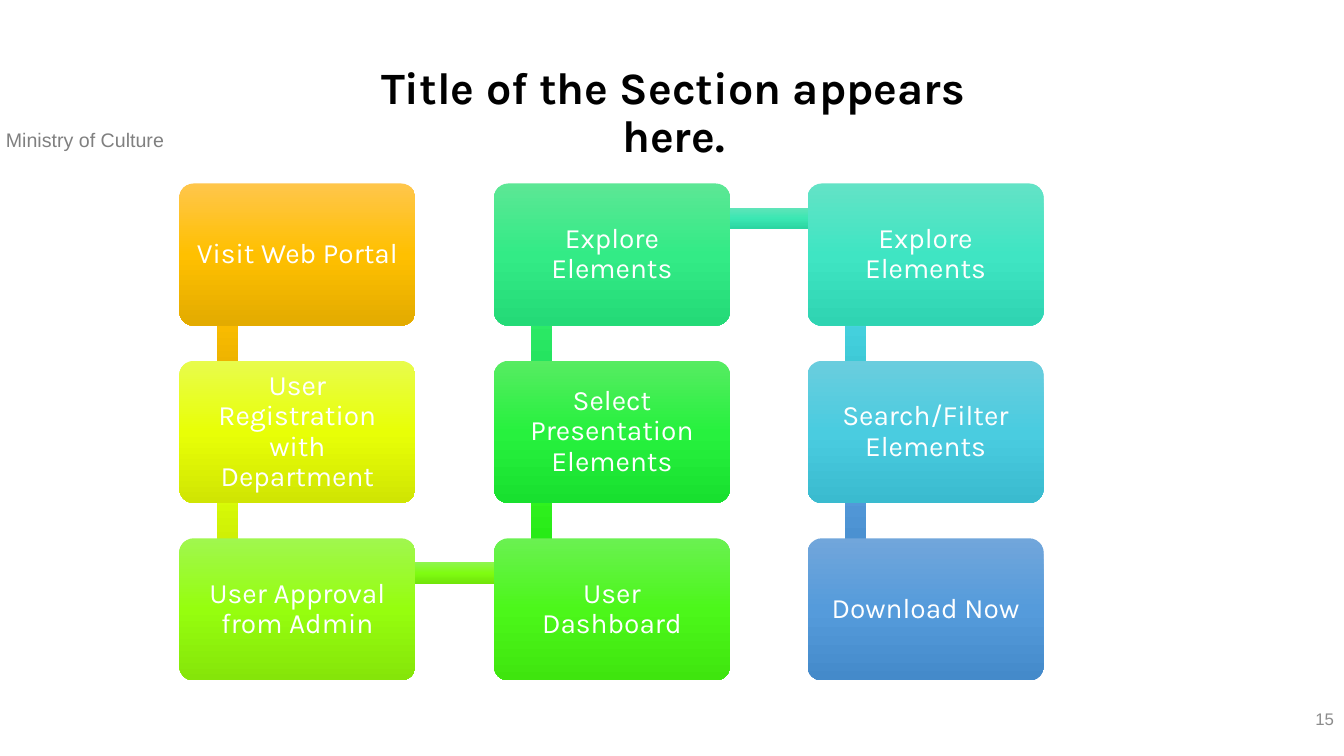
import copy

import pptx
import pptx.dml.color
import pptx.enum.shapes
import pptx.enum.text
import pptx.oxml.ns
import pptx.util

Inches = pptx.util.Inches
RGBColor = pptx.dml.color.RGBColor
Shapes = pptx.enum.shapes.MSO_SHAPE
Align = pptx.enum.text.PP_ALIGN
Anchor = pptx.enum.text.MSO_ANCHOR

BLACK = RGBColor(0x00, 0x00, 0x00)
WHITE = RGBColor(0xFF, 0xFF, 0xFF)
MINISTRY_GRAY = RGBColor(0x80, 0x80, 0x80)
NUMBER_GRAY = RGBColor(0x8C, 0x8C, 0x8C)

COLUMN_LEFTS = (1.78, 4.9, 8.01)
FIRST_TOP = 1.82
ROW_PITCH = 1.76
BOX_WIDTH, BOX_HEIGHT = 2.34, 1.41
BAR_THICKNESS = 0.21

STEPS = [
    ("Visit Web Portal", 0, 0, "FFC64B FFC000 E3AB00", "FFC64B FFC000 E3AB00"),
    ("User Registration with Department", 0, 1, "E8FC4C E8FF06 D0E503", "DCFC4C DCFF07 C5E504"),
    ("User Approval from Admin", 0, 2, "A0F74E 96FE0E 85E509", "8EF54F 7FFC11 71E50A"),
    ("User Dashboard", 1, 2, "6AF151 4CF71A 3FE50E", "5BEF53 31F420 22E411"),
    ("Select Presentation Elements", 1, 1, "56EC62 27F13E 18E02F", "59E97E 2EED69 1FDD59"),
    ("Explore Elements", 1, 0, "5CE795 33EB86 24DA77", "61E4B9 3BE7B3 2CD6A2"),
    ("Explore Elements", 2, 0, "63E3C6 3FE5C3 2FD4B2", "69D4DF 48D4E1 38C3D0"),
    ("Search/Filter Elements", 2, 1, "6ACDDE 4ACCE0 3ABBCF", "71A6DB 559BDB 448ACA"),
    ("Download Now", 2, 2, "71A6DB 559BDB 448ACA", None),
]


class SlideBuilder:
    heading_font = "Karla"
    small_font = "Arial"

    def __init__(self, slide):
        self.slide = slide

    def add_text(self, frame, text, size, font, color, align, bold=False, spacing=1.0):
        frame.word_wrap = True
        paragraph = frame.paragraphs[0]
        paragraph.alignment = align
        paragraph.line_spacing = spacing
        run = paragraph.add_run()
        run.text = text
        run.font.size = pptx.util.Pt(size)
        run.font.name = font
        run.font.bold = bold
        run.font.color.rgb = color

    def label(self, left, top, width, height, text, size, font, color, align,
              anchor=Anchor.TOP, bold=False, spacing=1.0):
        box = self.slide.shapes.add_textbox(
            Inches(left), Inches(top), Inches(width), Inches(height))
        box.text_frame.vertical_anchor = anchor
        self.add_text(box.text_frame, text, size, font, color, align, bold, spacing)

    def gradient_shape(self, kind, left, top, width, height, colors):
        shape = self.slide.shapes.add_shape(
            kind, Inches(left), Inches(top), Inches(width), Inches(height))
        shape.shadow.inherit = False
        shape.line.fill.background()
        shape.fill.gradient()
        shape.fill.gradient_angle = 270
        stop_list = next(shape._element.iter(pptx.oxml.ns.qn("a:gsLst")))
        stop_list.insert(1, copy.deepcopy(stop_list[0]))
        for index, (stop, color) in enumerate(zip(shape.fill.gradient_stops, colors.split())):
            stop.position = index / 2
            stop.color.rgb = RGBColor.from_string(color)
        return shape

    def bar(self, start, end, colors):
        left = COLUMN_LEFTS[start[0]]
        top = FIRST_TOP + ROW_PITCH * min(start[1], end[1])
        if start[0] == end[0]:
            self.gradient_shape(Shapes.RECTANGLE, left + 0.37, top + 0.35,
                                BAR_THICKNESS, 1.75, colors)
        else:
            self.gradient_shape(Shapes.RECTANGLE, left + 0.48, top + 0.24,
                                3.1, BAR_THICKNESS, colors)

    def step(self, text, column, row, colors):
        shape = self.gradient_shape(
            Shapes.ROUNDED_RECTANGLE, COLUMN_LEFTS[column], FIRST_TOP + ROW_PITCH * row,
            BOX_WIDTH, BOX_HEIGHT, colors)
        shape.adjustments[0] = 0.1
        frame = shape.text_frame
        frame.vertical_anchor = Anchor.MIDDLE
        frame.margin_left = frame.margin_right = Inches(0.12)
        frame.margin_top = frame.margin_bottom = Inches(0.12)
        self.add_text(frame, text, 20, self.heading_font, WHITE, Align.CENTER, spacing=0.9)


def main():
    presentation = pptx.Presentation()
    presentation.slide_width = Inches(13.33)
    presentation.slide_height = Inches(7.5)
    builder = SlideBuilder(presentation.slides.add_slide(presentation.slide_layouts[6]))

    builder.label(-0.04, 1.22, 2.9, 0.34, "Ministry of Culture", 14,
                  builder.small_font, MINISTRY_GRAY, Align.LEFT)
    for current, following in zip(STEPS, STEPS[1:]):
        builder.bar(current[1:3], following[1:3], current[4])
    for text, column, row, colors, _ in STEPS:
        builder.step(text, column, row, colors)
    builder.label(10.33, 6.93, 3, 0.4, "15", 12, builder.small_font,
                  NUMBER_GRAY, Align.RIGHT, Anchor.MIDDLE)
    builder.label(3.28, 0.6, 6.8, 1.07, "Title of the Section appears here.", 32,
                  builder.heading_font, BLACK, Align.CENTER, bold=True, spacing=0.9)
    presentation.save("out.pptx")


if __name__ == "__main__":
    main()
